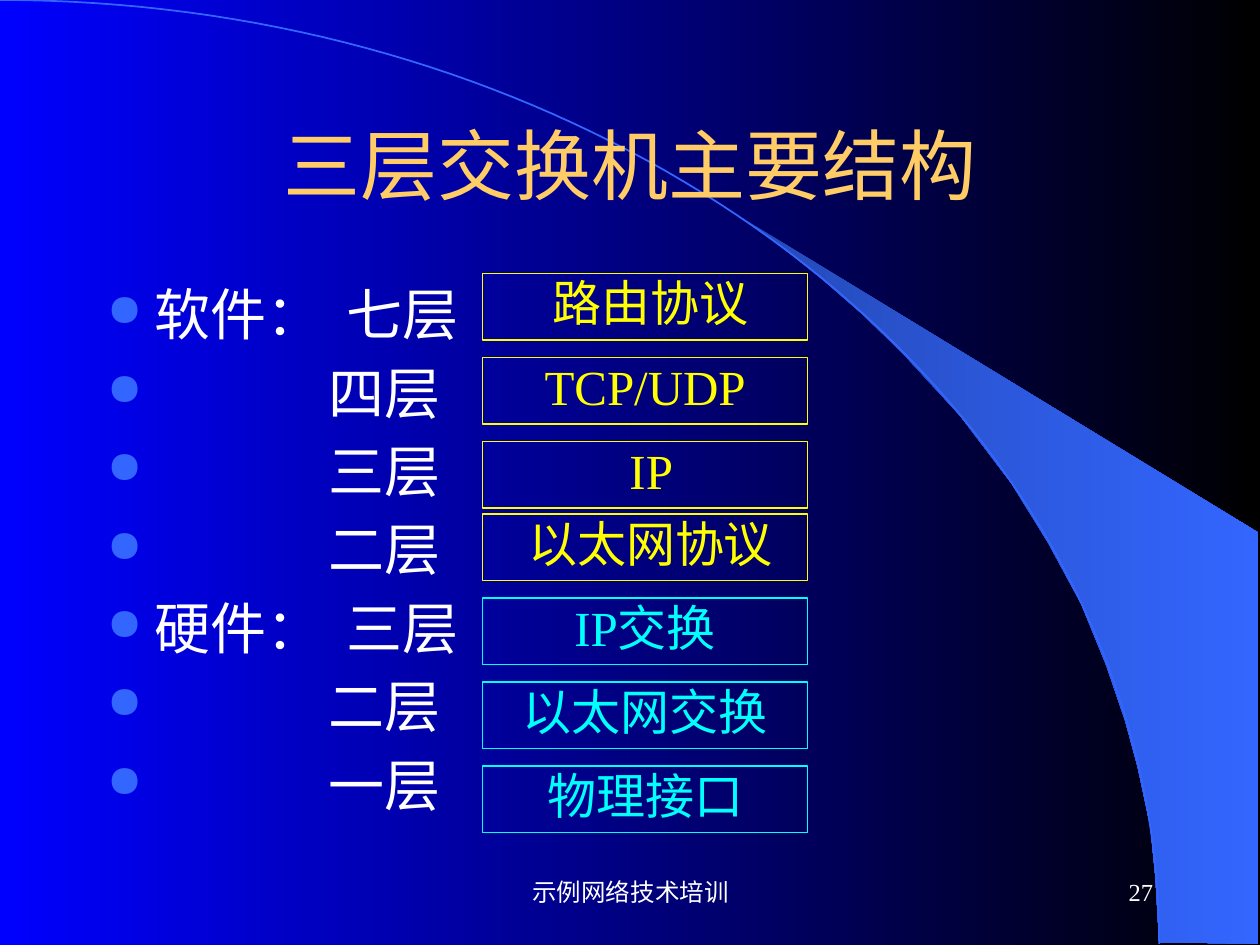
from lxml.etree import SubElement
from pptx import Presentation
from pptx.dml.color import RGBColor
from pptx.enum.shapes import MSO_SHAPE
from pptx.enum.text import MSO_ANCHOR, PP_ALIGN
from pptx.oxml.ns import qn
from pptx.util import Inches, Pt

WHITE, YELLOW, CYAN, GOLD, BLUE = "FFFFFF", "FFFF00", "00FFFF", "FFCC66", "3366FF"
SERIF = "Times New Roman"
SOFTWARE = [" 路由协议", "TCP/UDP", " IP"]
LINK_AND_HARDWARE = [(" 以太网协议", YELLOW), ("IP交换", CYAN), ("以太网交换", CYAN), ("物理接口", CYAN)]
LAYERS = ["软件：\t七层", "四层", "三层", "二层", "硬件：\t三层", "二层", "一层"]
WEDGE = [
    (9.2, 7.48), (9.99, 7.49), (9.99, 4.23), (5.89, 1.73), (6.24, 1.99), (6.53, 2.22),
    (6.85, 2.5), (7.16, 2.8), (7.62, 3.3), (8.03, 3.84), (8.32, 4.31), (8.58, 4.79),
    (8.78, 5.28), (8.93, 5.72), (9.03, 6.09), (9.13, 6.56), (9.17, 6.96),
]


def color(value):
    """Turn a hex string into a colour."""
    return RGBColor.from_string(value)


def fill_gradient(fill, start, end):
    """Fill from left to right between two colours."""
    fill.gradient()
    fill.gradient_angle = 0
    for stop, value in zip(fill.gradient_stops, (start, end)):
        stop.color.rgb = color(value)


def style_paragraph(para, size, font, value, align):
    """Set the font and alignment of a paragraph."""
    para.alignment = align
    para.font.size = Pt(size)
    para.font.name = font
    para.font.color.rgb = color(value)


def add_outline(page, points, closed):
    """Draw a freeform through points given in inches."""
    places = [(Inches(x), Inches(y)) for x, y in points]
    builder = page.shapes.build_freeform(*places[0])
    builder.add_line_segments(places[1:], close=closed)
    shape = builder.convert_to_shape()
    shape.shadow.inherit = False
    return shape


def add_backdrop(page):
    """Draw the shaded wedge and the arc along its edge."""
    fill_gradient(page.background.fill, "0000FF", "000000")
    wedge = add_outline(page, WEDGE, True)
    fill_gradient(wedge.fill, "2449B6", BLUE)
    wedge.line.fill.background()
    steps = [step / 80 for step in range(81)]
    curve = [
        (15.24 * t * (1 - t) ** 2 + 27.6 * t**2 * (1 - t) + 9.2 * t**3,
         10.05 * t**2 * (1 - t) + 7.49 * t**3)
        for t in steps
    ]
    arc = add_outline(page, curve, False)
    arc.fill.background()
    arc.line.color.rgb = color(BLUE)
    arc.line.width = Pt(1)


def add_text(page, place, text, size, font, value, align):
    """Add one line of vertically centred text."""
    box = page.shapes.add_textbox(*map(Inches, place))
    frame = box.text_frame
    frame.word_wrap = True
    frame.vertical_anchor = MSO_ANCHOR.MIDDLE
    frame.text = text
    style_paragraph(frame.paragraphs[0], size, font, value, align)


def set_bullet(para, indent, tab):
    """Give a paragraph a hanging round bullet and a tab stop."""
    properties = para._p.get_or_add_pPr()
    properties.set("marL", str(Inches(indent)))
    properties.set("indent", str(-Inches(indent)))
    bullet_color = SubElement(properties, qn("a:buClr"))
    SubElement(bullet_color, qn("a:srgbClr"), val=BLUE)
    SubElement(properties, qn("a:buSzPct"), val="80000")
    SubElement(properties, qn("a:buChar"), char="●")
    tabs = SubElement(properties, qn("a:tabLst"))
    SubElement(tabs, qn("a:tab"), pos=str(Inches(tab)), algn="l")
    properties.append(properties.find(qn("a:defRPr")))


def add_layers(page):
    """List the layers, with the unlabelled ones indented further."""
    box = page.shapes.add_textbox(*map(Inches, (0.75, 2.17, 8.5, 4.5)))
    frame = box.text_frame
    frame.word_wrap = True
    frame.text = "\n".join(LAYERS)
    for para in frame.paragraphs:
        style_paragraph(para, 32, SERIF, WHITE, PP_ALIGN.LEFT)
        para.space_before = Pt(6.4)
        set_bullet(para, 0.38 if "\t" in para.text else 1.76, 1.9)


def add_protocol(page, top, text, value):
    """Add an outlined box naming one protocol or function."""
    box = page.shapes.add_shape(MSO_SHAPE.RECTANGLE, *map(Inches, (3.83, top, 2.58, 0.53)))
    box.shadow.inherit = False
    box.fill.background()
    box.line.color.rgb = color(value)
    box.line.width = Pt(0.75)
    frame = box.text_frame
    frame.vertical_anchor = MSO_ANCHOR.TOP
    frame.text = text
    para = frame.paragraphs[0]
    style_paragraph(para, 28, SERIF, value, PP_ALIGN.CENTER)
    para.line_spacing = 0.9


def main():
    """Build the slide and save it."""
    deck = Presentation()
    deck.slide_width, deck.slide_height = Inches(10), Inches(7.5)
    page = deck.slides.add_slide(deck.slide_layouts[6])
    add_backdrop(page)
    add_text(page, (3.42, 6.83, 3.17, 0.5), "示例网络技术培训", 14, SERIF, WHITE, PP_ALIGN.CENTER)
    add_text(page, (7.17, 6.83, 2.08, 0.5), "27", 14, SERIF, WHITE, PP_ALIGN.RIGHT)
    add_text(page, (0.75, 0.67, 8.5, 1.25), "三层交换机主要结构", 44, "Arial", GOLD, PP_ALIGN.CENTER)
    add_layers(page)
    pitch = 2 / 3
    for row, text in enumerate(SOFTWARE):
        add_protocol(page, 2.17 + row * pitch, text, YELLOW)
    for row, (text, value) in enumerate(LINK_AND_HARDWARE):
        add_protocol(page, 4.08 + row * pitch, text, value)
    deck.save("out.pptx")


if __name__ == "__main__":
    main()
